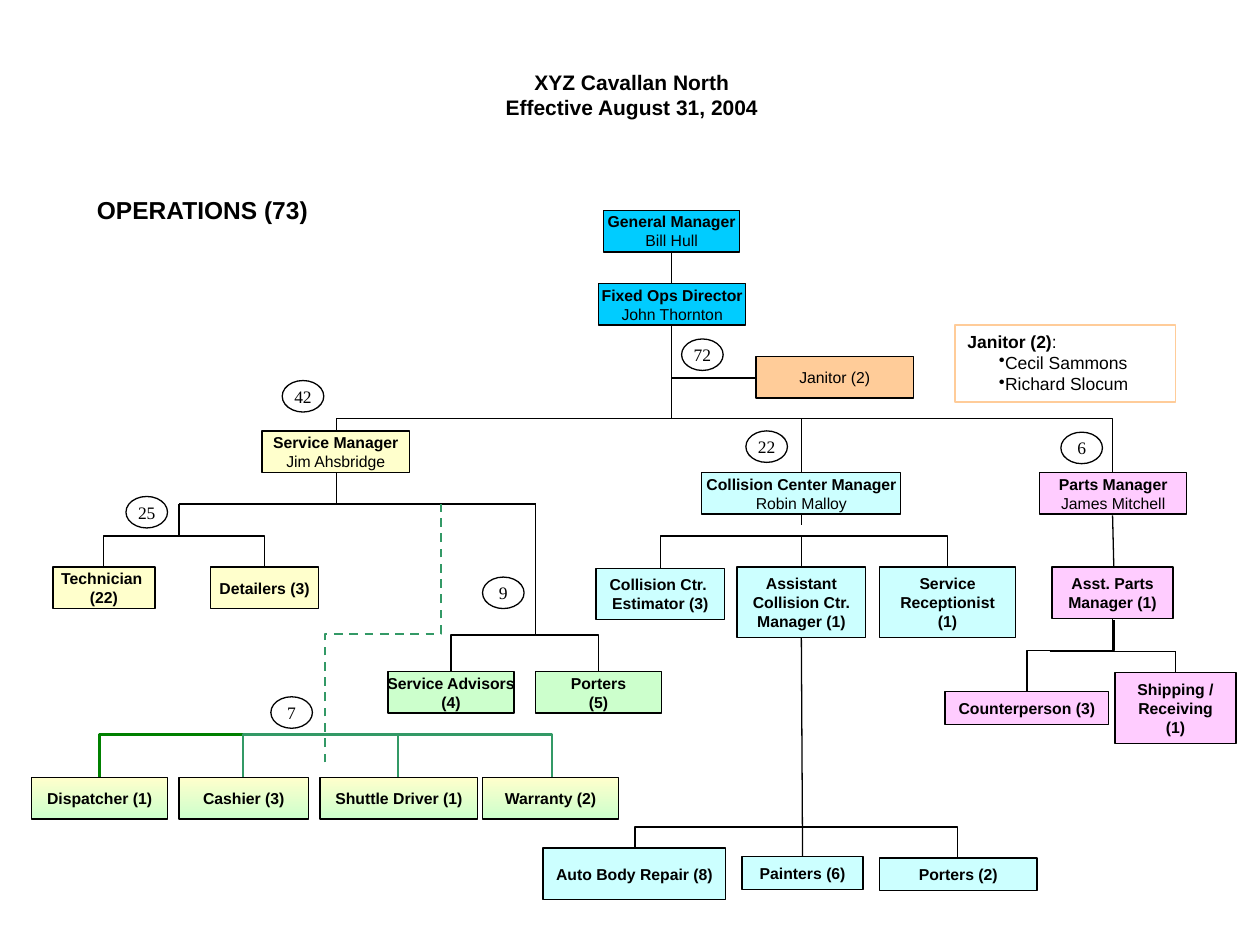
from dataclasses import dataclass

from lxml.etree import SubElement
from pptx import Presentation
from pptx.dml.color import RGBColor
from pptx.enum.dml import MSO_LINE
from pptx.enum.shapes import MSO_CONNECTOR, MSO_SHAPE
from pptx.enum.text import MSO_ANCHOR, MSO_AUTO_SIZE, PP_ALIGN
from pptx.oxml.ns import qn
from pptx.util import Inches, Pt

HEX = {"black": "000000", "blue": "00CCFF", "cream": "FFFFCC", "mint": "CCFFCC",
       "aqua": "CCFFFF", "pink": "FFCCFF", "peach": "FFCC99",
       "green": "008000", "teal": "339966"}


@dataclass
class Box:
    text: str
    x: float
    y: float
    w: float
    h: float = 0.33
    name: str = ""
    wrap: bool = False
    bold: bool = True


@dataclass
class Link:
    """A line that leaves its start upright; bend is the height of its level part."""
    x1: float
    y1: float
    x2: float
    y2: float
    bend: float | None = None
    hue: str = "black"
    width: float = 0.75
    dash: bool = False


BOXES = {
    "blue": [Box("General Manager", 4.79, 1.67, 1.08, name="Bill Hull"),
             Box("Fixed Ops Director", 4.75, 2.25, 1.17, name="John Thornton")],
    "peach": [Box("Janitor (2)", 6, 2.83, 1.25, wrap=True, bold=False)],
    "cream": [Box("Service Manager", 2.08, 3.42, 1.17, name="Jim Ahsbridge"),
              Box("Technician \n(22)", 0.42, 4.5, 0.81),
              Box("Detailers (3)", 1.67, 4.5, 0.86)],
    "mint": [Box("Service Advisors\n(4)", 3.08, 5.33, 1),
             Box("Porters\n(5)", 4.25, 5.33, 1)],
    "fade": [Box("Dispatcher (1)", 0.25, 6.17, 1.08),
             Box("Cashier (3)", 1.42, 6.17, 1.03),
             Box("Shuttle Driver (1)", 2.54, 6.17, 1.25),
             Box("Warranty (2)", 3.83, 6.17, 1.08)],
    "aqua": [Box("Collision Center Manager", 5.57, 3.75, 1.58, name="Robin Malloy"),
             Box("Collision Ctr. \nEstimator (3)", 4.73, 4.51, 1.02, 0.41, wrap=True),
             Box("Assistant Collision Ctr. Manager (1)", 5.85, 4.5, 1.02, 0.56, wrap=True),
             Box("Service Receptionist (1)", 6.98, 4.5, 1.08, 0.56, wrap=True),
             Box("Auto Body Repair (8)", 4.31, 6.73, 1.45, 0.41, wrap=True),
             Box("Painters (6)", 5.89, 6.8, 0.96, 0.26, wrap=True),
             Box("Porters (2)", 6.98, 6.81, 1.25, 0.26, wrap=True)],
    "pink": [Box("Parts Manager", 8.25, 3.75, 1.17, name="James Mitchell"),
             Box("Asst. Parts Manager (1)", 8.35, 4.5, 0.96, 0.41, wrap=True),
             Box("Counterperson (3)", 7.5, 5.49, 1.3, 0.26, wrap=True),
             Box("Shipping /\nReceiving (1)", 8.85, 5.34, 0.96, 0.56, wrap=True)],
}

LINES = [
    Link(5.33, 2, 5.33, 2.25), Link(5.33, 3, 6, 3),
    Link(2.67, 3.75, 2.67, 4), Link(1.42, 4, 2.67, 4), Link(2.67, 4, 4.25, 4),
    Link(1.42, 4, 1.42, 4.25), Link(6.36, 4.09, 6.36, 4.17),
    Link(6.36, 5.06, 6.37, 6.8), Link(8.83, 4.09, 8.84, 4.5),
    Link(8.83, 4.91, 8.83, 5.17), Link(8.33, 5.17, 9.33, 5.17),
    Link(9.33, 5.17, 9.33, 5.42),
]
ELBOWS = [
    Link(2.67, 3.42, 5.33, 2.58, 3.32),
    Link(5.33, 2.58, 6.36, 3.76, 3.32),
    Link(5.33, 2.58, 8.83, 3.75, 3.32),
    Link(0.82, 4.51, 2.1, 4.5, 4.25),
    Link(4.75, 5.41, 4.25, 4.16, 5.04),
    Link(3.58, 5.39, 4.25, 4, 5.04),
    Link(5.24, 4.51, 6.36, 4.5, 4.25),
    Link(6.36, 4.51, 7.52, 4.5, 4.25),
    Link(8.15, 5.5, 8.84, 4.92, 5.16),
    Link(5.04, 6.81, 6.37, 6.8, 6.56),
    Link(6.37, 6.82, 7.6, 6.81, 6.56),
    Link(2.58, 6.05, 3.5, 4, 5.03, "teal", 1.25, True),
    Link(0.79, 6.17, 2.79, 5.83, None, "green", 1.25),
] + [Link(a, 6.17, b, 5.83, None, "teal", 1.25)
     for a, b in ((1.93, 2.57), (3.16, 2.31), (4.38, 2.79))]

COUNTS = [("25", 1, 3.94), ("7", 2.15, 5.53), ("9", 3.83, 4.58), ("22", 5.92, 3.42),
          ("6", 8.42, 3.43), ("72", 5.41, 2.69), ("42", 2.24, 3.02)]


def tint(hue: str) -> RGBColor:
    return RGBColor.from_string(HEX[hue])


def write(para, text: str, size: float, bold: bool = False, font: str = "Arial") -> None:
    run = para.add_run()
    run.text = text
    for key, value in {"name": font, "size": Pt(size), "bold": bold}.items():
        setattr(run.font, key, value)
    run.font.color.rgb = tint("black")


def fill_text(frame, lines: list, size: float, align=PP_ALIGN.CENTER,
              font: str = "Arial", **form) -> None:
    """Write (text, bold) lines and set the frame's format values."""
    for key, value in {"auto_size": MSO_AUTO_SIZE.NONE, **form}.items():
        setattr(frame, key, value)
    for i, (text, bold) in enumerate(lines):
        para = frame.add_paragraph() if i else frame.paragraphs[0]
        para.alignment = align
        write(para, text, size, bold, font)


def add_form(slide, kind, x: float, y: float, w: float, h: float,
             edge: str = "black", width: float = 0.75):
    form = slide.shapes.add_shape(kind, *map(Inches, (x, y, w, h)))
    form.shadow.inherit = False
    form.fill.background()
    form.line.color.rgb, form.line.width = tint(edge), Pt(width)
    return form


def add_box(slide, box: Box, hue: str) -> None:
    form = add_form(slide, MSO_SHAPE.RECTANGLE, box.x, box.y, box.w, box.h)
    if hue == "fade":
        form.fill.gradient()
        form.fill.gradient_angle = 270
        for stop, end in zip(form.fill.gradient_stops, ("cream", "mint")):
            stop.color.rgb = tint(end)
    else:
        form.fill.solid()
        form.fill.fore_color.rgb = tint(hue)
    lines = [(text, box.bold) for text in box.text.split("\n")]
    if box.name:
        lines.append((box.name, False))
    fill_text(form.text_frame, lines, 9, word_wrap=box.wrap,
              vertical_anchor=MSO_ANCHOR.MIDDLE)


def style_line(line, link: Link) -> None:
    line.line.color.rgb, line.line.width = tint(link.hue), Pt(link.width)
    if link.dash:
        line.line.dash_style = MSO_LINE.DASH
    SubElement(line._element.spPr, qn("a:effectLst"))


def add_line(slide, link: Link) -> None:
    ends = map(Inches, (link.x1, link.y1, link.x2, link.y2))
    style_line(slide.shapes.add_connector(MSO_CONNECTOR.STRAIGHT, *ends), link)


def add_elbow(slide, link: Link) -> None:
    """Turn an elbow a quarter so that it leaves its start upright."""
    long, wide = abs(link.y2 - link.y1), abs(link.x2 - link.x1)
    left = (link.x1 + link.x2 - long) / 2
    top = (link.y1 + link.y2 - wide) / 2
    ends = map(Inches, (left, top, left + long, top + wide))
    line = slide.shapes.add_connector(MSO_CONNECTOR.ELBOW, *ends)
    props = line._element.spPr
    frame, geom = props.find(qn("a:xfrm")), props.find(qn("a:prstGeom"))
    right, down = link.x2 > link.x1, link.y2 > link.y1
    frame.set("rot", str((270 if right else 90) * 60000))
    if right == down:
        frame.set("flipH", "1")
    if link.bend is None:
        geom.set("prst", "bentConnector2")
    else:
        part = (link.bend - link.y1) / (link.y2 - link.y1)
        SubElement(geom.find(qn("a:avLst")), qn("a:gd"), name="adj1",
                   fmla=f"val {round(part * 100000)}")
    style_line(line, link)


def add_note(slide) -> None:
    note = add_form(slide, MSO_SHAPE.RECTANGLE, 7.58, 2.58, 1.75, 0.61, "peach", 1)
    frame = note.text_frame
    fill_text(frame, [("Janitor (2)", True), ("Cecil Sammons", False),
                      ("Richard Slocum", False)], 10, PP_ALIGN.LEFT,
              word_wrap=True, vertical_anchor=MSO_ANCHOR.TOP)
    write(frame.paragraphs[0], ":", 10)
    for para in frame.paragraphs[1:]:
        props = para._p.get_or_add_pPr()
        props.set("marL", str(Inches(0.25)))
        props.set("indent", "0")
        SubElement(props, qn("a:buChar"), char="•")


def main() -> None:
    deck = Presentation()
    deck.slide_width, deck.slide_height = Inches(10), Inches(7.5)
    slide = deck.slides.add_slide(deck.slide_layouts[5])
    title = slide.shapes.title
    spot = {"left": 3.91, "top": 0.5, "width": 2.21, "height": 0.5}
    for key, value in spot.items():
        setattr(title, key, Inches(value))
    fill_text(title.text_frame, [("XYZ Cavallan North", True),
                                 ("Effective August 31, 2004", True)], 12,
              word_wrap=False, vertical_anchor=MSO_ANCHOR.TOP)
    head = slide.shapes.add_textbox(*map(Inches, (0.67, 1.5, 1.89, 0.33)))
    fill_text(head.text_frame, [("OPERATIONS (73)", True)], 14, PP_ALIGN.LEFT,
              word_wrap=False)
    for link in LINES:
        add_line(slide, link)
    for link in ELBOWS:
        add_elbow(slide, link)
    for hue, group in BOXES.items():
        for box in group:
            add_box(slide, box, hue)
    for count, x, y in COUNTS:
        oval = add_form(slide, MSO_SHAPE.OVAL, x, y, 0.33, 0.25)
        fill_text(oval.text_frame, [(count, False)], 10, font="Times New Roman",
                  word_wrap=False, vertical_anchor=MSO_ANCHOR.MIDDLE)
    add_note(slide)
    deck.save("out.pptx")


if __name__ == "__main__":
    main()
